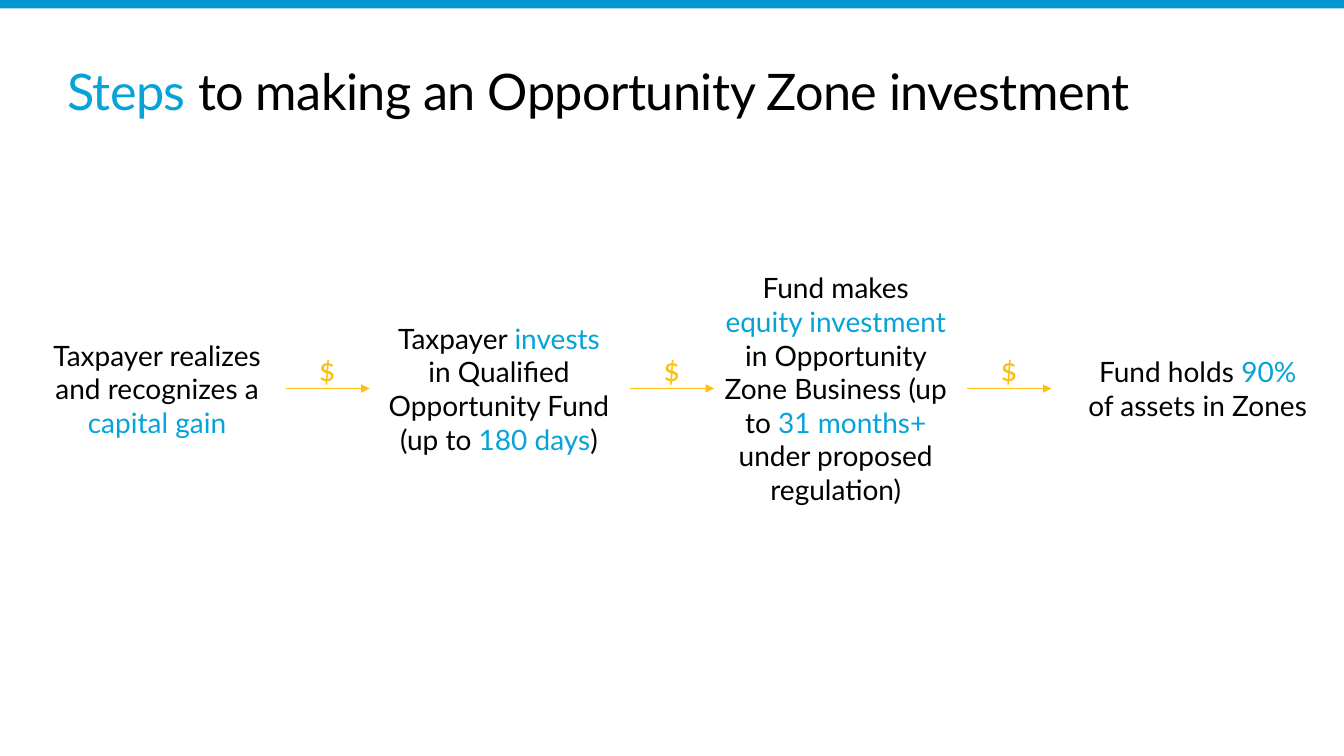
"""Build a slide on the steps to making an Opportunity Zone investment."""
import pptx
import pptx.dml.color
import pptx.enum.shapes
import pptx.enum.text
import pptx.oxml.ns
import pptx.util
from lxml import etree

Pt = pptx.util.Pt
COLORS = {"text": "000000", "accent": "06A3D9", "bar": "0096D2", "arrow": "FDBF11"}
MIDDLE = 277.5
STEP_WIDTH = 177
LINE_HEIGHT = 24
STEPS = [
    (23.75, 3, [("Taxpayer realizes and recognizes a ", "text"), ("capital gain", "accent")]),
    (268, 4, [("Taxpayer ", "text"), ("invests", "accent"),
              (" in Qualified Opportunity Fund (up to ", "text"),
              ("180 days", "accent"), (")", "text")]),
    (508.5, 7, [("Fund makes ", "text"), ("equity investment ", "accent"),
                ("in Opportunity Zone Business (up to ", "text"),
                ("31 months+ ", "accent"), ("under proposed regulation)", "text")]),
    (767, 2, [("Fund holds ", "text"), ("90%", "accent"), (" of assets in Zones", "text")]),
]
ARROW_LEFTS = [204, 450, 691]
ARROW_LENGTH = 60


def rgb(name):
    return pptx.dml.color.RGBColor.from_string(COLORS[name])


def write_text(shape, parts, size=20, font="Lato", align="LEFT", margins=(7.2, 3.6), spacing=None):
    frame = shape.text_frame
    frame.word_wrap = True
    frame.auto_size = pptx.enum.text.MSO_AUTO_SIZE.NONE
    frame.vertical_anchor = pptx.enum.text.MSO_ANCHOR.MIDDLE
    frame.margin_left = frame.margin_right = Pt(margins[0])
    frame.margin_top = frame.margin_bottom = Pt(margins[1])
    paragraph = frame.paragraphs[0]
    paragraph.alignment = getattr(pptx.enum.text.PP_ALIGN, align)
    for text, color in parts:
        run = paragraph.add_run()
        run.text = text
        run.font.size = Pt(size)
        run.font.name = font
        run.font.color.rgb = rgb(color)
        if spacing is not None:
            run.font._element.set("spc", str(round(spacing * 100)))


def add_bar(slide):
    bar = slide.shapes.add_shape(
        pptx.enum.shapes.MSO_SHAPE.RECTANGLE, 0, 0, Pt(960), Pt(6))
    bar.shadow.inherit = False
    bar.fill.solid()
    bar.fill.fore_color.rgb = rgb("bar")
    bar.line.fill.background()


def set_title(slide):
    title = slide.shapes.title
    title.left, title.top, title.width, title.height = Pt(48), Pt(42), Pt(864), Pt(44.5)
    parts = [("Steps", "accent"), (" to making an Opportunity Zone investment", "text")]
    write_text(title, parts, size=36, margins=(0, 0), spacing=-0.4)


def add_step(slide, left, line_count, parts):
    height = line_count * LINE_HEIGHT + 7.2
    box = slide.shapes.add_textbox(
        Pt(left), Pt(MIDDLE - height / 2), Pt(STEP_WIDTH), Pt(height))
    write_text(box, parts, align="CENTER")


def add_money_arrow(slide, left):
    arrow = slide.shapes.add_connector(
        pptx.enum.shapes.MSO_CONNECTOR.STRAIGHT,
        Pt(left), Pt(MIDDLE), Pt(left + ARROW_LENGTH), Pt(MIDDLE))
    arrow.line.color.rgb = rgb("arrow")
    arrow.line.width = Pt(0.75)
    qn = pptx.oxml.ns.qn
    etree.SubElement(arrow.line._get_or_add_ln(), qn("a:tailEnd"), type="triangle")
    etree.SubElement(arrow._element.spPr, qn("a:effectLst"))
    label = slide.shapes.add_textbox(Pt(left + 16.5), Pt(245), Pt(27), Pt(36))
    write_text(label, [("$", "arrow")], size=24, font="Calibri")


def main():
    presentation = pptx.Presentation()
    presentation.slide_width, presentation.slide_height = Pt(960), Pt(540)
    slide = presentation.slides.add_slide(presentation.slide_layouts[5])
    add_bar(slide)
    set_title(slide)
    for left, line_count, parts in STEPS:
        add_step(slide, left, line_count, parts)
    for left in ARROW_LEFTS:
        add_money_arrow(slide, left)
    presentation.save("out.pptx")


if __name__ == "__main__":
    main()
